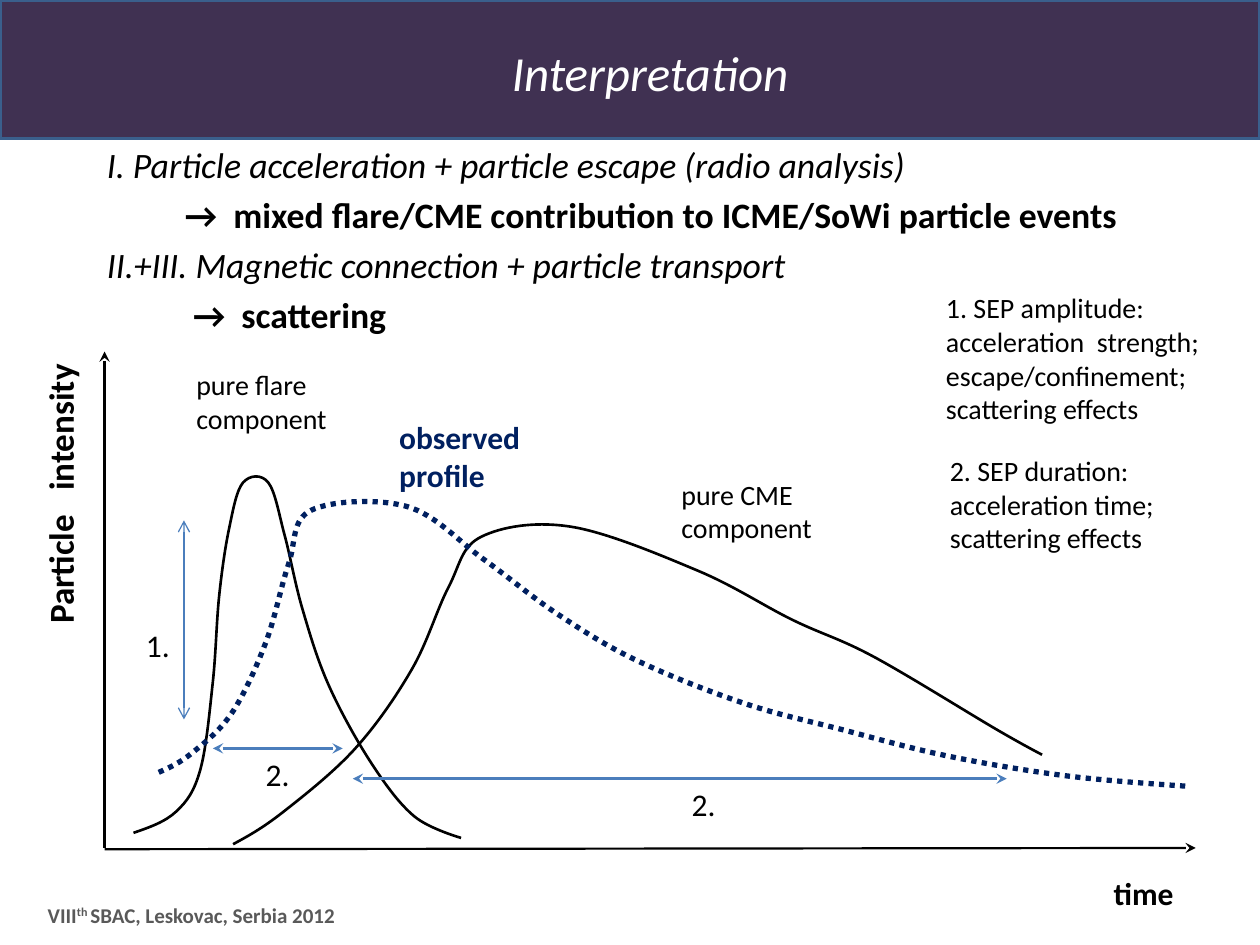
from lxml import etree
from pptx import Presentation
from pptx import util as u
from pptx.dml.color import RGBColor
from pptx.enum import dml, shapes, text
from pptx.oxml.ns import qn

COLORS = {"black": "000000", "white": "FFFFFF", "banner": "403152", "edge": "3A5F8C",
          "gray": "595959", "navy": "002060", "arrow": "4B7EBC"}
COLS, ROWS = 100, 75
CELL = u.Inches(10) // COLS

FLARE = [(10.6, 66.1), (14, 64.4), (15.9, 61.1), (16.9, 54.1), (17.4, 47.3), (18.2, 41.9),
         (19.3, 38.3), (21.3, 38.3), (22.6, 42.5), (24, 48.3), (26.1, 54.4), (29.5, 60.6),
         (32.9, 64.8), (36.6, 66.5)]
CME = [(18.5, 67), (22.4, 64.5), (28.2, 59.4), (32.7, 53.1), (35.6, 46.6), (38.2, 42.6),
       (45.3, 41.8), (55.4, 45.3), (62.9, 49.2), (69.3, 52.1), (79.1, 57.9), (82.7, 59.9)]
OBSERVED = [(12.6, 61.3), (15.2, 59.8), (18.4, 56.6), (21.1, 51), (22.9, 44.8), (24.7, 40.5),
            (32.3, 40.2), (38.4, 44.4), (44.2, 48.7), (50.5, 52.4), (59, 55.8), (66.8, 57.9),
            (75.2, 60), (84.8, 61.6), (94.2, 62.4)]


def grid(*cells):
    """Convert grid cells to slide lengths."""
    return [u.Emu(round(c * CELL)) for c in cells]


def rgb(name):
    """Look up a named colour."""
    return RGBColor.from_string(COLORS[name])


def set_line(line, color, width):
    """Set the colour and width of a line."""
    line.color.rgb = rgb(color)
    line.width = u.Pt(width)


def add_banner(holder, box):
    """Add the dark title band."""
    sp = holder.add_shape(shapes.MSO_SHAPE.RECTANGLE, *grid(*box))
    sp.shadow.inherit = False
    sp.fill.solid()
    sp.fill.fore_color.rgb = rgb("banner")
    set_line(sp.line, "edge", 2)


def add_text(holder, box, paras, size, color="black", style="", wrap=False):
    """Add a text box; each paragraph is a string or a list of (text, style) runs."""
    sp = holder.add_textbox(*grid(*box))
    tf = sp.text_frame
    tf.word_wrap = wrap
    tf.auto_size = text.MSO_AUTO_SIZE.NONE if wrap else text.MSO_AUTO_SIZE.SHAPE_TO_FIT_TEXT
    for i, runs in enumerate(paras):
        p = tf.add_paragraph() if i else tf.paragraphs[0]
        for words, flags in [(runs, style)] if isinstance(runs, str) else runs:
            r = p.add_run()
            r.text = words
            r.font.name = "Calibri"
            r.font.size = u.Pt(size)
            r.font.color.rgb = rgb(color)
            r.font.bold = "b" in flags
            r.font.italic = "i" in flags
            if "^" in flags:
                r.font._element.set("baseline", "30000")
    return sp


def hang(sp, size):
    """Give paragraphs a hanging indent and space before of a fifth of the size."""
    for p in sp.text_frame.paragraphs:
        p.space_before = u.Pt(round(size * 0.2, 2))
        pr = p._p.get_or_add_pPr()
        pr.set("marL", str(u.Inches(0.62)))
        pr.set("indent", str(-u.Inches(0.62)))


def add_arrow(holder, start, end, color, width, tip="stealth", both=True):
    """Add a straight arrow with one or two tips."""
    sp = holder.add_connector(shapes.MSO_CONNECTOR.STRAIGHT, *grid(*start, *end))
    set_line(sp.line, color, width)
    ln = sp.line._get_or_add_ln()
    for name in ("a:headEnd", "a:tailEnd") if both else ("a:tailEnd",):
        etree.SubElement(ln, qn(name)).set("type", tip)
    etree.SubElement(sp._element.spPr, qn("a:effectLst"))


def spline(pts):
    """Return Bezier control and end points of a smooth curve through the points."""
    def handle(i, sign):
        return tuple(m + sign * (b - a) / 6 for a, m, b in zip(pts[i - 1], pts[i], pts[i + 1]))

    last = len(pts) - 1
    out = []
    for i in range(last):
        into = handle(i + 1, -1) if i + 1 < last else pts[last]
        leave = handle(i, 1) if i else tuple((a + b) / 2 for a, b in zip(pts[0], into))
        out += [leave, into, pts[i + 1]]
    return out


def add_curve(holder, pts, color, width, dash=None):
    """Add an open smooth curve through the points."""
    builder = holder.build_freeform(*grid(*pts[0]))
    builder.add_line_segments([grid(*pt) for pt in spline(pts)], close=False)
    sp = builder.convert_to_shape()
    sp.shadow.inherit = False
    sp.fill.background()
    set_line(sp.line, color, width)
    if dash:
        sp.line.dash_style = dash
    segments = list(sp._element.iter(qn("a:lnTo")))
    for i in range(0, len(segments), 3):
        bezier = etree.Element(qn("a:cubicBezTo"))
        segments[i].addprevious(bezier)
        for seg in segments[i:i + 3]:
            bezier.append(seg[0])
            seg.getparent().remove(seg)


def add_heading(holder):
    """Add the banner, title, main points, remarks and footer."""
    add_banner(holder, (0, 0, COLS, 11))
    title = add_text(holder, (13.8, 2.9, 75.6, 5.5), ["Interpretation"], 28, "white", "i", True)
    hang(title, 28)
    title.text_frame.paragraphs[0].alignment = text.PP_ALIGN.CENTER
    footer = add_text(holder, (2.8, 70.6, 25.2, 4),
                      [[("VIII", "b"), ("th ", "b^"), ("SBAC, Leskovac, Serbia 2012", "b")]],
                      12, "gray", wrap=True)
    footer.text_frame.vertical_anchor = text.MSO_ANCHOR.MIDDLE
    add_text(holder, (74.4, 35.5, 18.9, 9.1),
             ["2. SEP duration:", "acceleration time;", "scattering effects"], 16)
    add_text(holder, (74.1, 22.6, 22.4, 11.8),
             ["1. SEP amplitude:", "acceleration  strength;", "escape/confinement;",
              "scattering effects"], 16)
    points = add_text(holder, (7.5, 11.5, 91.3, 14.2), [
        [("I. Particle acceleration + particle escape (radio analysis)", "i")],
        [("\t", ""), ("→  mixed flare/CME contribution to ICME/SoWi particle events", "b")],
        [("II.+III. Magnetic connection + particle transport", "i")],
        [("\t", "i"), (" →  scattering", "b")]], 20.4, wrap=True)
    hang(points, 20.4)
    points.text_frame.paragraphs[0].line_spacing = 0.8


def add_diagram(holder):
    """Add the intensity-time diagram."""
    add_arrow(holder, (8.3, 67.4), (94.9, 67.3), "black", 1.25, both=False)
    add_arrow(holder, (8.3, 67.3), (8.3, 27.9), "black", 1.25, both=False)
    add_curve(holder, FLARE, "black", 1.5)
    add_curve(holder, CME, "black", 1.5)
    axis = add_text(holder, (-6.6, 36.9, 22.8, 4.4), ["Particle   intensity"], 20, style="b")
    axis.rotation = 270
    add_text(holder, (87.4, 68.9, 6.8, 4), ["time"], 18, style="b")
    add_curve(holder, OBSERVED, "navy", 3, dml.MSO_LINE.ROUND_DOT)
    add_arrow(holder, (16.9, 59.4), (27.2, 59.4), "arrow", 1.5)
    add_arrow(holder, (28, 61.8), (79.9, 61.8), "arrow", 1.5)
    for x, y, name in ((14.6, 28.7, "pure flare"), (53.1, 37.4, "pure CME")):
        add_text(holder, (x, y, 12.5, 6.4), [name, "component"], 16)
    add_text(holder, (30.7, 32.7, 11.7, 7.1), ["observed", "profile"], 18, "navy", "b")
    add_arrow(holder, (14.6, 57.1), (14.6, 41.3), "arrow", 0.75, "arrow")
    for x, y, mark in ((10.6, 49.2, "1."), (20.1, 59.4, "2."), (53.9, 61.8, "2.")):
        add_text(holder, (x, y, 3.9, 4), [mark], 18)


def main():
    """Build and save the slide."""
    prs = Presentation()
    prs.slide_width, prs.slide_height = grid(COLS, ROWS)
    s = prs.slides.add_slide(prs.slide_layouts[6])
    add_heading(s.shapes)
    add_diagram(s.shapes.add_group_shape().shapes)
    prs.save("out.pptx")


if __name__ == "__main__":
    main()
